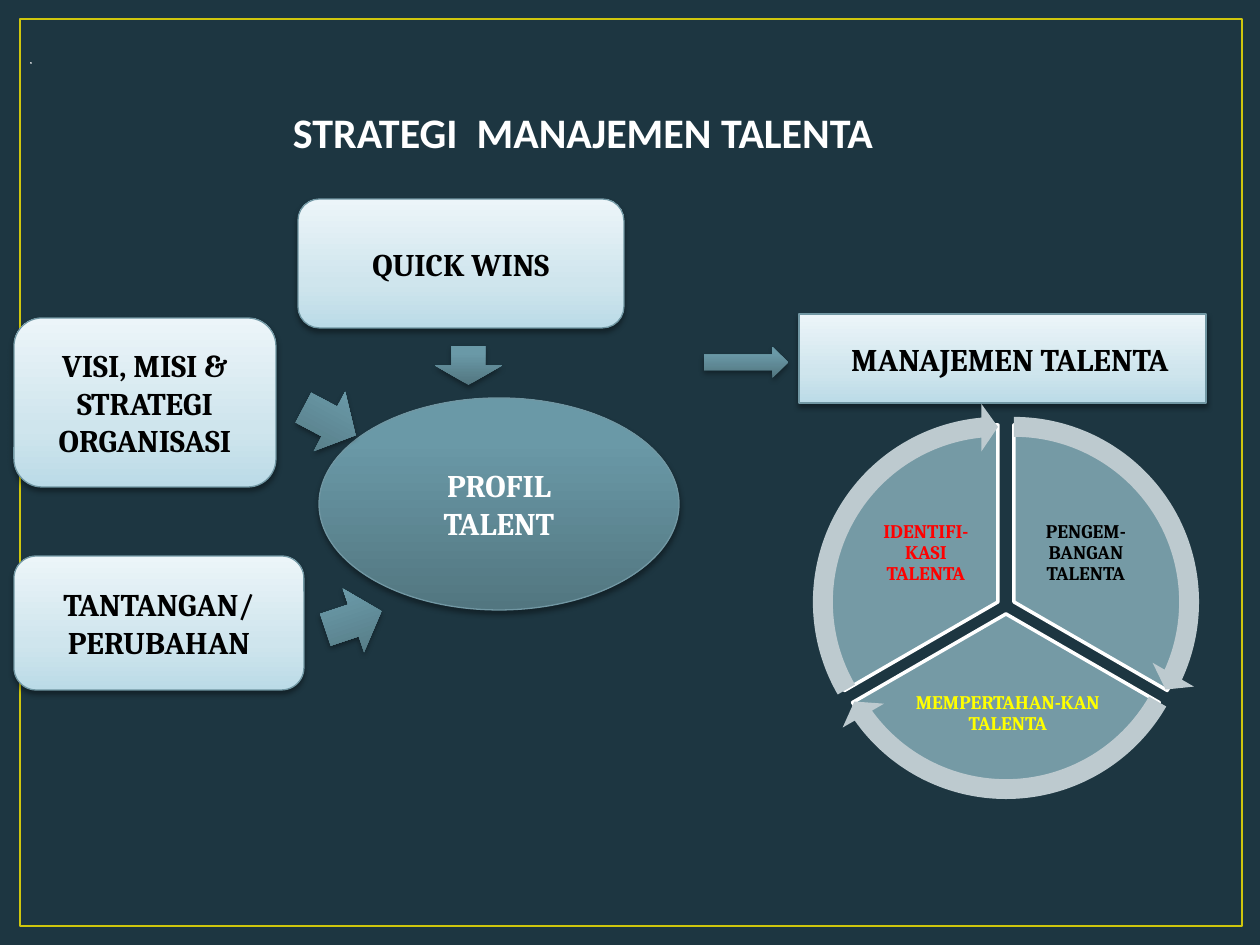
from copy import deepcopy

from lxml.etree import SubElement
from pptx import Presentation
from pptx.dml.color import RGBColor
from pptx.enum.shapes import MSO_SHAPE
from pptx.enum.text import MSO_ANCHOR, PP_ALIGN
from pptx.oxml.ns import qn
from pptx.util import Emu, Pt

PX = 914400 / 126
COLORS = {
    "background": "1D3641",
    "frame": "CFC60D",
    "wedge": "759AA5",
    "cycle": "BDCACF",
    "outline": "7197A3",
    "white": "FFFFFF",
    "black": "000000",
    "red": "FF0000",
    "yellow": "FFFF00",
}
LIGHT_STOPS = ((0, "BBDBE7"), (0.35, "CFE5ED"), (1, "ECF5F9"))
DARK_STOPS = ((0, "527680"), (0.8, "6A99A7"), (1, "6A9AA9"))


def px(length):
    return Emu(round(length * PX))


def rgb(name):
    return RGBColor.from_string(COLORS[name])


def add_shape(shapes, kind, box, fill=None, line=None, line_width=0.75):
    shape = shapes.add_shape(kind, *map(px, box))
    shape.shadow.inherit = False
    if fill:
        shape.fill.solid()
        shape.fill.fore_color.rgb = rgb(fill)
    else:
        shape.fill.background()
    if line:
        shape.line.color.rgb = rgb(line)
        shape.line.width = Pt(line_width)
    else:
        shape.line.fill.background()
    return shape


def add_raised_shape(shapes, kind, box, stops, line=None, rotation=0):
    """Add a shape with a vertical gradient and a soft shadow below it."""
    shape = add_shape(shapes, kind, box, line=line)
    shape.rotation = rotation
    shape.fill.gradient()
    shape.fill.gradient_angle = 90
    properties = shape._element.spPr
    stop_list = properties.find(qn("a:gradFill")).find(qn("a:gsLst"))
    stop_list.append(deepcopy(stop_list[-1]))
    for gradient_stop, (position, color) in zip(shape.fill.gradient_stops, stops):
        gradient_stop.position = position
        gradient_stop.color.rgb = RGBColor.from_string(color)

    shadow = SubElement(
        properties.find(qn("a:effectLst")), qn("a:outerShdw"),
        blurRad=str(Pt(3.1)), dist=str(Pt(1.8)), dir="5400000", rotWithShape="0",
    )
    shadow_color = SubElement(shadow, qn("a:srgbClr"), val=COLORS["black"])
    SubElement(shadow_color, qn("a:alpha"), val="36000")
    return shape


def write_text(shape, lines, size, color, font="Cambria", spacing=None):
    frame = shape.text_frame
    frame.word_wrap = True
    frame.vertical_anchor = MSO_ANCHOR.MIDDLE
    for index, line in enumerate(lines):
        paragraph = frame.paragraphs[0] if index == 0 else frame.add_paragraph()
        paragraph.alignment = PP_ALIGN.CENTER
        paragraph.line_spacing = spacing
        run = paragraph.add_run()
        run.text = line
        run.font.name = font
        run.font.size = Pt(size)
        run.font.bold = True
        run.font.color.rgb = rgb(color)


def add_frame(shapes, box):
    left, top, _, _ = box
    add_shape(shapes, MSO_SHAPE.RECTANGLE, box, line="frame", line_width=1.5)
    add_shape(shapes, MSO_SHAPE.RECTANGLE, (left + 11, top + 44, 0, 0),
              fill="wedge", line="white")


def add_title(shapes, box):
    title = shapes.add_textbox(*map(px, box))
    write_text(title, ["STRATEGI  MANAJEMEN TALENTA"], 24, "white", font="Calibri")


def add_management_header(shapes, box):
    left, top, width, height = box
    add_raised_shape(shapes, MSO_SHAPE.RIGHT_ARROW,
                     (left - 95, top + 33, 84, 31), DARK_STOPS)
    header = add_raised_shape(shapes, MSO_SHAPE.RECTANGLE, box, LIGHT_STOPS, "outline")
    header.text_frame.margin_left = px(27)
    write_text(header, ["MANAJEMEN TALENTA"], 18, "black")


def add_talent_wheel(shapes, box):
    """Draw three pie wedges, pushed out from the centre, and the arrows around them."""
    left, top, size, _ = box
    center_x, center_y = left + size / 2, top + size / 2
    pie_size = 354
    # Adjustment angles: 216 units make a full turn, so a wedge takes 72.
    turn, third, arrow_head = 216, 72, 3.28
    wedges = (
        # text, text colour, start angle, push from centre, label box
        ("PENGEM-BANGAN TALENTA", "black", 162, (8, -4), (216, 93, 126, 106)),
        ("MEMPERTAHAN-KAN TALENTA", "yellow", 18, (0, 8), (106, 260, 190, 93)),
        ("IDENTIFI-KASI TALENTA", "red", 90, (-8, -4), (56, 93, 126, 106)),
    )

    def centered_box(push, side):
        return (center_x + push[0] - side / 2, center_y + push[1] - side / 2, side, side)

    for text, color, start, push, (label_x, label_y, width, height) in wedges:
        wedge = add_shape(shapes, MSO_SHAPE.PIE, centered_box(push, pie_size),
                          "wedge", "white", 2)
        wedge.adjustments[0] = start
        wedge.adjustments[1] = (start + third) % turn
        label = shapes.add_textbox(px(left + label_x), px(top + label_y),
                                   px(width), px(height))
        frame = label.text_frame
        frame.margin_left = frame.margin_right = px(2)
        frame.margin_top = frame.margin_bottom = px(2)
        write_text(label, [text], 11, color, spacing=0.9)

    for _, _, start, push, _ in wedges:
        arrow = add_shape(shapes, MSO_SHAPE.CIRCULAR_ARROW,
                          centered_box(push, size), "cycle")
        end = (start + third) % turn - arrow_head
        for index, value in enumerate((0.05, arrow_head, end, start, 0.06)):
            arrow.adjustments[index] = value


def add_profile_diagram(shapes, box):
    """Draw the three inputs and the arrows leading to the talent profile."""
    left, top, _, _ = box
    rounded = MSO_SHAPE.ROUNDED_RECTANGLE
    nodes = (
        (rounded, (0, 119, 262, 169), ["VISI, MISI & STRATEGI ORGANISASI"]),
        (rounded, (0, 357, 290, 134), ["TANTANGAN/", "PERUBAHAN"]),
        (rounded, (284, 0, 326, 129), ["QUICK WINS"]),
        (MSO_SHAPE.OVAL, (305, 199, 360, 212), ["PROFIL", "TALENT"]),
    )
    arrows = (
        (MSO_SHAPE.RIGHT_ARROW, (286, 189, 59, 67), 27.9),
        (MSO_SHAPE.RIGHT_ARROW, (310, 388, 59, 67), 341.6),
        (MSO_SHAPE.DOWN_ARROW, (421, 147, 67, 39), 0),
    )
    for kind, (x, y, width, height), lines in nodes:
        is_profile = kind == MSO_SHAPE.OVAL
        node = add_raised_shape(shapes, kind, (left + x, top + y, width, height),
                                DARK_STOPS if is_profile else LIGHT_STOPS, "outline")
        write_text(node, lines, 18, "white" if is_profile else "black")
    for kind, (x, y, width, height), rotation in arrows:
        add_raised_shape(shapes, kind, (left + x, top + y, width, height),
                         DARK_STOPS, rotation=rotation)


def main():
    presentation = Presentation()
    presentation.slide_width = px(1260)
    presentation.slide_height = px(945)
    slide = presentation.slides.add_slide(presentation.slide_layouts[6])
    slide.background.fill.solid()
    slide.background.fill.fore_color.rgb = rgb("background")

    add_frame(slide.shapes, (20, 19, 1222, 907))
    add_management_header(slide.shapes, (799, 314, 407, 89))
    add_talent_wheel(slide.shapes.add_group_shape().shapes, (807, 407, 398, 398))
    add_profile_diagram(slide.shapes.add_group_shape().shapes, (14, 199, 665, 491))
    add_title(slide.shapes, (0, 95, 1166, 73))
    presentation.save("out.pptx")


if __name__ == "__main__":
    main()
